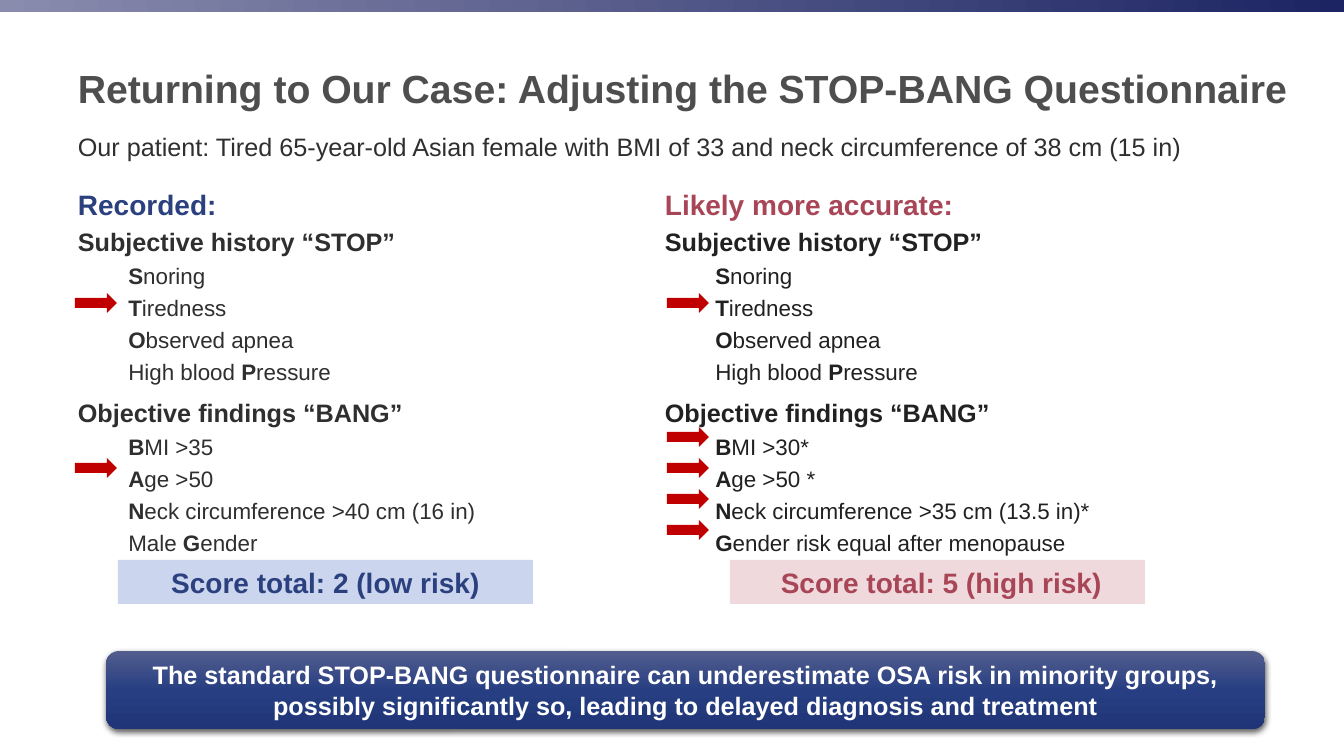
from pptx import Presentation
from pptx.dml.color import RGBColor
from pptx.enum.shapes import MSO_SHAPE as Shape
from pptx.enum.text import MSO_ANCHOR as Anchor, PP_ALIGN as Align
from pptx.oxml import parse_xml
from pptx.oxml.ns import nsdecls, qn
from pptx.util import Pt

PX = 914400 / 100.8
COLORS = {
    "title": "4D4E4D", "text": "2F2F2F", "dark": "212121", "white": "FFFFFF",
    "blue": "2B407E", "pale blue": "CCD5EE", "red": "A84657", "pale red": "EFD9DC",
    "arrow": "C00000",
}
BAR_STOPS = [(0, "898CAD"), (100, "1C2463")]
BANNER_STOPS = [(0, "535E8E"), (50, "273E82"), (100, "1F3577")]

presentation = Presentation()
presentation.slide_width, presentation.slide_height = round(1344 * PX), round(756 * PX)
slide = presentation.slides.add_slide(presentation.slide_layouts[6])


def add_box(kind, left, top, width, height, fill=None, anchor=Anchor.MIDDLE):
    """Add a text box (kind None) or a preset shape with a solid or gradient fill."""
    box = [round(value * PX) for value in (left, top, width, height)]
    if kind is None:
        shape = slide.shapes.add_textbox(*box)
    else:
        shape = slide.shapes.add_shape(kind, *box)
        shape.line.fill.background()
        shape.shadow.inherit = False
        if isinstance(fill, str):
            shape.fill.solid()
            shape.fill.fore_color.rgb = RGBColor.from_string(COLORS[fill])
        else:
            shape.fill.gradient()
            stops = shape._element.spPr.find(qn("a:gradFill")).find(qn("a:gsLst"))
            for stop in list(stops):
                stops.remove(stop)
            for position, color in fill:
                stops.append(parse_xml(
                    f'<a:gs {nsdecls("a")} pos="{position * 1000}">'
                    f'<a:srgbClr val="{color}"/></a:gs>'))
    shape.text_frame.word_wrap = True
    shape.text_frame.vertical_anchor = anchor
    return shape


def write(paragraph, text, size, color, bold=False, align=Align.LEFT):
    """Write text run by run; each | switches bold on or off."""
    paragraph.alignment = align
    for index, part in enumerate(text.split("|")):
        if part:
            run = paragraph.add_run()
            run.text = part
            run.font.name, run.font.size = "Arial", Pt(size)
            run.font.bold = bold or index % 2 == 1
            run.font.color.rgb = RGBColor.from_string(COLORS[color])


# Top bar
bar = add_box(Shape.RECTANGLE, 0, 0, 1344, 12, BAR_STOPS)
bar.fill.gradient_angle = 0

# Title and patient summary
title = add_box(None, 68, 22, 1237, 131)
write(title.text_frame.paragraphs[0],
      "Returning to Our Case: Adjusting the STOP-BANG Questionnaire", 28, "title", True)
patient = add_box(None, 68, 95, 1150, 71, anchor=Anchor.BOTTOM)
write(patient.text_frame.paragraphs[0],
      "Our patient: Tired 65-year-old Asian female with BMI of 33 and "
      "neck circumference of 38 cm (15 in)", 18, "text")

# Two questionnaire columns: heading, findings, score and arrow positions
STOP = ["|S|noring", "|T|iredness", "|O|bserved apnea", "High blood |P|ressure"]
COLUMNS = [
    dict(left=68, heading="Recorded:", accent="blue", color="text",
         bang=["|B|MI >35", "|A|ge >50", "|N|eck circumference >40 cm (16 in)",
               "Male |G|ender"],
         score="Score total: 2 (low risk)", score_left=118, fill="pale blue",
         arrow_left=75, bang_arrows=[1]),
    dict(left=655, heading="Likely more accurate:", accent="red", color="dark",
         bang=["|B|MI >30*", "|A|ge >50 *", "|N|eck circumference >35 cm (13.5 in)*",
               "|G|ender risk equal after menopause"],
         score=" Score total: 5 (high risk)", score_left=730, fill="pale red",
         arrow_left=667, bang_arrows=[0, 1, 2, 3]),
]
ROW_STEP, TIREDNESS_TOP, BANG_TOP = 31, 293, 427

for column in COLUMNS:
    frame = add_box(None, column["left"], 183, 570, 436, anchor=Anchor.TOP).text_frame
    write(frame.paragraphs[0], column["heading"], 20, column["accent"], True)
    for section, items in [("Subjective history “STOP”", STOP),
                           ("Objective findings “BANG”", column["bang"])]:
        heading = frame.add_paragraph()
        write(heading, section, 18, column["color"], True)
        if items is not STOP:
            heading.space_before = Pt(5)
        for item in items:
            paragraph = frame.add_paragraph()
            paragraph._p.get_or_add_pPr().set("marL", "457200")
            write(paragraph, item, 16, column["color"])
    for paragraph in frame.paragraphs:
        paragraph.space_after = Pt(3.7)

    # Score total
    score = add_box(Shape.RECTANGLE, column["score_left"], 560, 415, 44, column["fill"])
    write(score.text_frame.paragraphs[0], column["score"], 20, column["accent"],
          True, Align.CENTER)

    # Arrows beside the positive answers
    for top in [TIREDNESS_TOP] + [BANG_TOP + ROW_STEP * row for row in column["bang_arrows"]]:
        add_box(Shape.RIGHT_ARROW, column["arrow_left"], top, 42, 20, "arrow")

# Conclusion banner with a soft shadow
banner = add_box(Shape.ROUNDED_RECTANGLE, 106, 651, 1159, 78, BANNER_STOPS)
banner.fill.gradient_angle = 270
banner._element.spPr.find(qn("a:effectLst")).append(parse_xml(
    f'<a:outerShdw {nsdecls("a")} blurRad="57150" dist="19050" dir="5400000" rotWithShape="0">'
    '<a:srgbClr val="000000"><a:alpha val="63000"/></a:srgbClr></a:outerShdw>'))
write(banner.text_frame.paragraphs[0],
      "The standard STOP-BANG questionnaire can underestimate OSA risk in minority groups, "
      "possibly significantly so, leading to delayed diagnosis and treatment",
      18, "white", True, Align.CENTER)

presentation.save("out.pptx")
